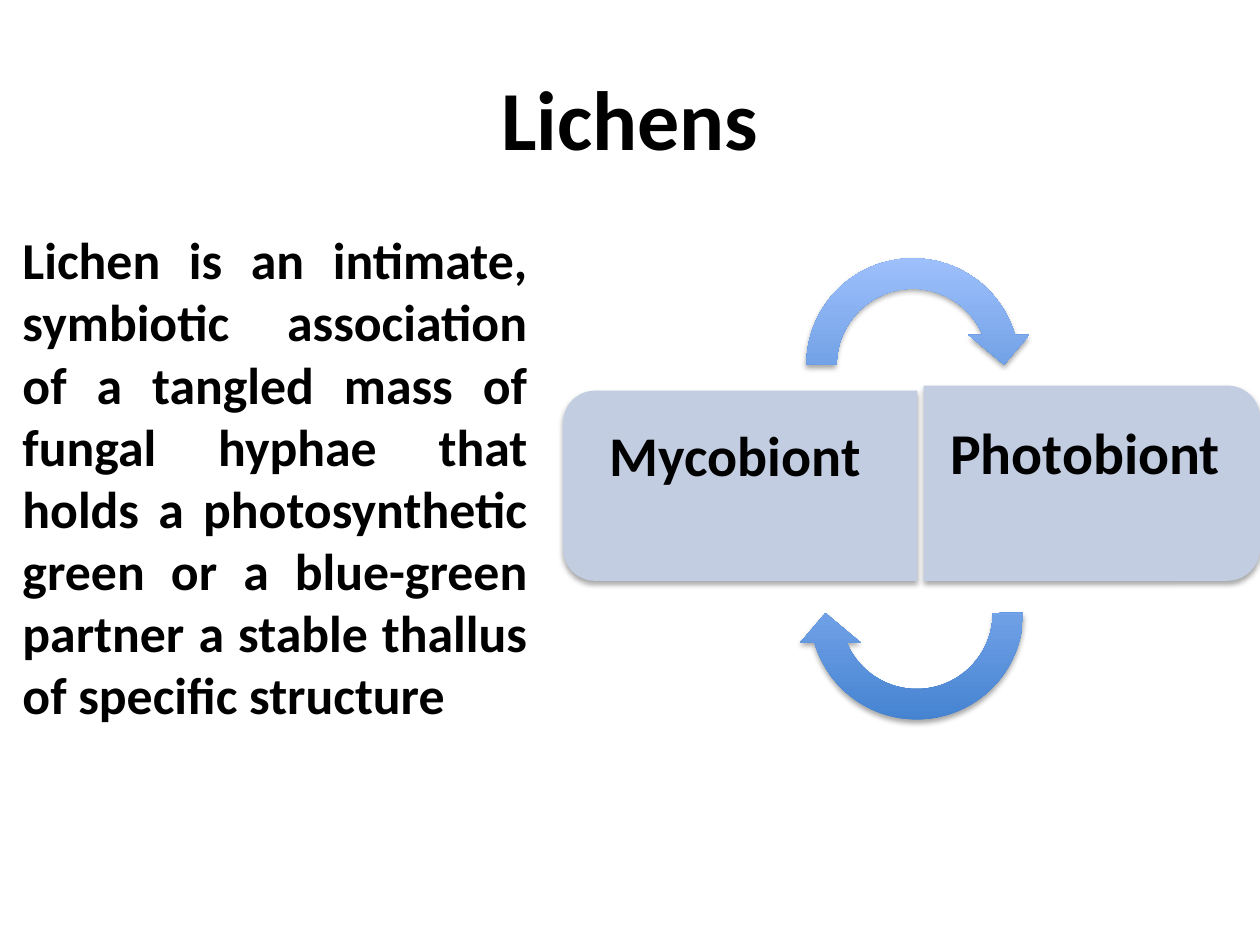
import pptx
import pptx.dml.color
import pptx.enum.shapes
import pptx.enum.text
import pptx.oxml
import pptx.oxml.ns
import pptx.util
from pptx.util import Inches

RGBColor = pptx.dml.color.RGBColor
BLACK = RGBColor(0x00, 0x00, 0x00)
PANEL_BLUE = RGBColor(0xC2, 0xCD, 0xE1)
ARROW_DARK = RGBColor(0x3F, 0x7F, 0xCE)
ARROW_LIGHT = RGBColor(0xA4, 0xC4, 0xFF)
FONT = "Calibri"

ALIGN = pptx.enum.text.PP_ALIGN
ANCHOR = pptx.enum.text.MSO_ANCHOR
SHAPE = pptx.enum.shapes.MSO_SHAPE

DEFINITION = (
    "Lichen is an intimate, symbiotic association of a tangled mass of fungal "
    "hyphae that holds a photosynthetic green or a blue-green partner a stable "
    "thallus of specific structure"
)
SHADOW_XML = (
    f'<a:effectLst {pptx.oxml.ns.nsdecls("a")}>'
    '<a:outerShdw blurRad="40000" dist="23000" dir="5400000" rotWithShape="0">'
    '<a:srgbClr val="000000"><a:alpha val="35000"/></a:srgbClr>'
    "</a:outerShdw></a:effectLst>"
)


def add_text(slide, text, box, size, align, anchor=ANCHOR.TOP,
             insets=(0.1, 0.05, 0.1, 0.05), line_spacing=1.0):
    """Add bold text; box is left, top, width, height in inches."""
    text_box = slide.shapes.add_textbox(*map(Inches, box))
    frame = text_box.text_frame
    frame.word_wrap = True
    frame.vertical_anchor = anchor
    (frame.margin_left, frame.margin_top,
     frame.margin_right, frame.margin_bottom) = map(Inches, insets)
    frame.text = text
    paragraph = frame.paragraphs[0]
    paragraph.alignment = align
    paragraph.line_spacing = line_spacing
    font = paragraph.runs[0].font
    font.name, font.size, font.bold = FONT, pptx.util.Pt(size), True
    font.color.rgb = BLACK


def add_shadowed_shape(slide, kind, box, rotation):
    shape = slide.shapes.add_shape(kind, *map(Inches, box))
    shape.rotation = rotation
    shape.line.fill.background()
    shape._element.spPr.append(pptx.oxml.parse_xml(SHADOW_XML))
    return shape


def add_panel(slide, box, rotation):
    panel = add_shadowed_shape(slide, SHAPE.ROUND_2_SAME_RECTANGLE, box, rotation)
    panel.fill.solid()
    panel.fill.fore_color.rgb = PANEL_BLUE


def add_cycle_arrow(slide, left, top, rotation):
    arrow = add_shadowed_shape(slide, SHAPE.CIRCULAR_ARROW,
                               (left, top, 1.93, 1.93), rotation)
    arrow.fill.gradient()
    arrow.fill.gradient_angle = 90
    for stop, color, position in zip(arrow.fill.gradient_stops,
                                     (ARROW_DARK, ARROW_LIGHT), (0, 1)):
        stop.color.rgb = color
        stop.position = position
    # Keep the light end on top when the arrow is turned
    gradient = arrow._element.spPr.find(pptx.oxml.ns.qn("a:gradFill"))
    gradient.set("rotWithShape", "0")


def main():
    presentation = pptx.Presentation()
    presentation.slide_width, presentation.slide_height = Inches(10), Inches(7.5)
    slide = presentation.slides.add_slide(presentation.slide_layouts[6])

    # Title and definition
    add_text(slide, "Lichens", (0.5, 0.3, 9, 1.25), 48, ALIGN.CENTER, ANCHOR.MIDDLE)
    add_text(slide, DEFINITION, (0.08, 1.76, 4.21, 4.95), 29.6, ALIGN.JUSTIFY)

    # The two partners
    add_panel(slide, (5.12, 2.45, 1.51, 2.81), 270)
    add_text(slide, "Mycobiont", (4.55, 3.18, 2.74, 1.36), 32, ALIGN.CENTER,
             insets=(0.13, 0.22, 0.3, 0.22), line_spacing=0.9)
    add_panel(slide, (7.89, 2.5, 1.55, 2.67), 90)
    add_text(slide, "Photobiont", (7.33, 3.14, 2.59, 1.4), 33, ALIGN.LEFT,
             insets=(0.21, 0.23, 0.14, 0.23), line_spacing=0.9)

    # Exchange between the partners
    add_cycle_arrow(slide, 6.28, 1.93, 0)
    add_cycle_arrow(slide, 6.31, 3.9, 180)

    presentation.save("out.pptx")


if __name__ == "__main__":
    main()
